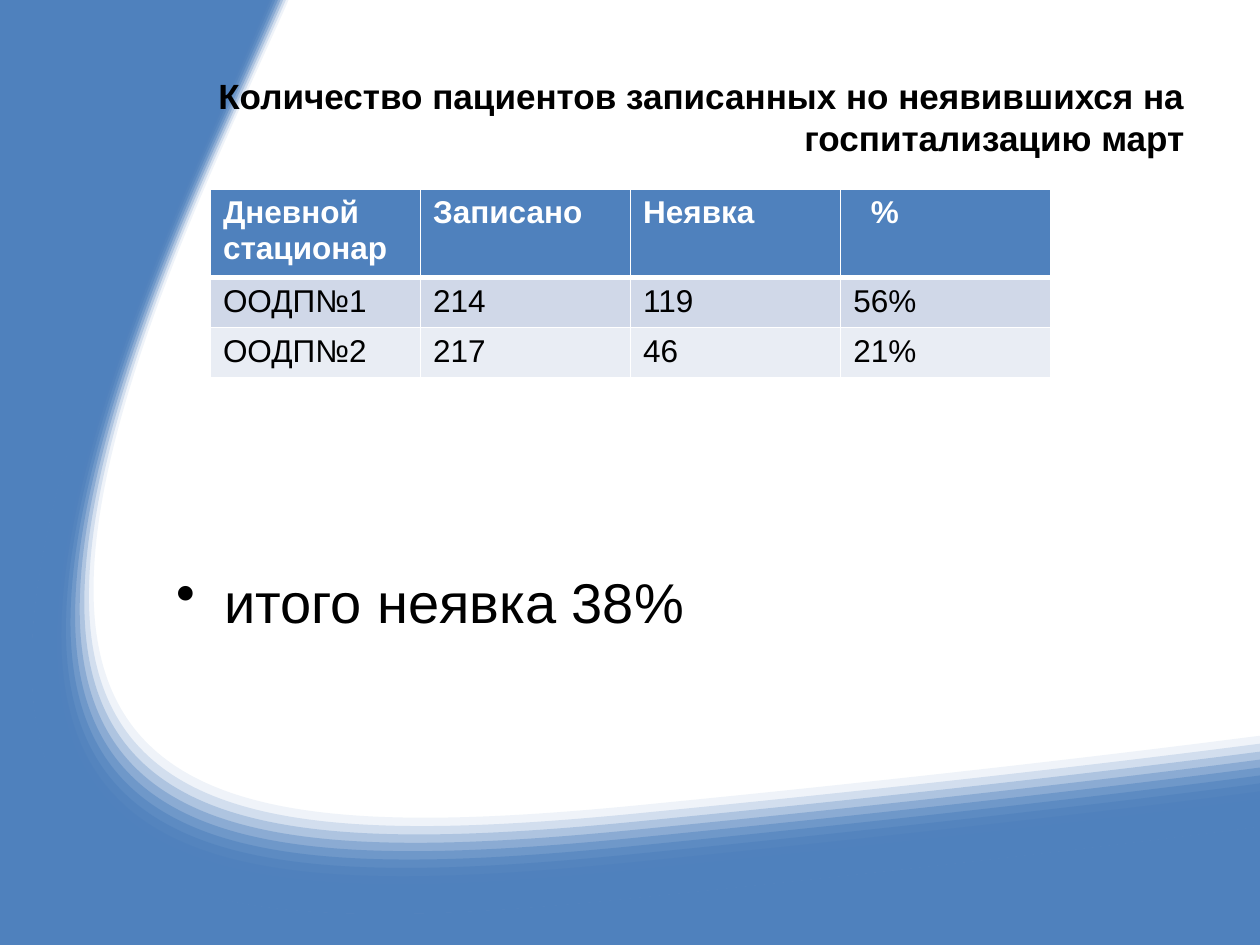
from dataclasses import dataclass

from lxml.etree import SubElement
from pptx import Presentation
from pptx.dml.color import RGBColor
from pptx.enum.text import MSO_ANCHOR, PP_ALIGN
from pptx.oxml.ns import qn
from pptx.util import Inches, Pt

COLORS = {
    "blue": "4F81BD",
    "white": "FFFFFF",
    "black": "000000",
    "odd_row": "D0D8E8",
    "even_row": "E9EDF4",
}
FONT = "Arial"
BAND_COUNT = 11

Point = tuple[float, float]

SLIDE_CORNERS: list[Point] = [(0, 0), (10, 0), (10, 7.5), (0, 7.5)]
OUTER_EDGE: list[Point] = [
    (10, 6.56), (10, 6.56), (8.06, 6.82), (4.91, 7.14), (0.8, 7.55),
    (-1.21, 7.12), (1.47, 1.15), (1.8, 0.41), (1.99, 0), (1.99, 0),
]
FIRST_BAND_EDGE: list[Point] = [
    (10, 5.84), (9.98, 5.84), (8.14, 6.09), (5.18, 6.38), (1.21, 6.78),
    (-0.55, 6.32), (1.8, 1.09), (2.11, 0.4), (2.29, 0.01), (2.29, 0),
]
LAST_BAND_EDGE: list[Point] = [
    (10, 6.47), (9.74, 6.51), (7.86, 6.75), (4.98, 7.04), (0.92, 7.45),
    (-1.07, 7.03), (1.58, 1.14), (1.86, 0.52), (2.03, 0.11), (2.08, 0),
]


@dataclass
class TextBlock:
    text: str
    top: float
    height: float
    size: int
    bold: bool = False
    alignment: PP_ALIGN = PP_ALIGN.LEFT
    anchor: MSO_ANCHOR = MSO_ANCHOR.TOP
    margin_top: float = 0.05
    bullet: bool = False


@dataclass
class TableRow:
    values: tuple[str, ...]
    fill: str
    height: float = 0.4
    header: bool = False


TEXT_BLOCKS = [
    TextBlock("Количество пациентов записанных но неявившихся на госпитализацию март",
              0.3, 1.25, 20, bold=True, alignment=PP_ALIGN.RIGHT, anchor=MSO_ANCHOR.MIDDLE),
    TextBlock("итого неявка 38%", 1.75, 4.95, 32, margin_top=2.75, bullet=True),
]
TABLE_ROWS = [
    TableRow(("Дневной стационар", "Записано", "Неявка", "%"), "blue", 0.65, header=True),
    TableRow(("ООДП№1", "214", "119", "56%"), "odd_row"),
    TableRow(("ООДП№2", "217", "46", "21%"), "even_row"),
]


def rgb(name: str) -> RGBColor:
    return RGBColor.from_string(COLORS[name])


def set_font(paragraph, size: int, color: str, bold: bool) -> None:
    paragraph.font.name = FONT
    paragraph.font.size = Pt(size)
    paragraph.font.bold = bold
    paragraph.font.color.rgb = rgb(color)


def blend_edges(start: list[Point], end: list[Point], share: float) -> list[Point]:
    return [(x1 + (x2 - x1) * share, y1 + (y2 - y1) * share)
            for (x1, y1), (x2, y2) in zip(start, end)]


def add_path_command(outline, command: str, points: list[Point]) -> None:
    element = SubElement(outline, qn(f"a:{command}"))
    for x, y in points:
        SubElement(element, qn("a:pt"), x=str(Inches(x)), y=str(Inches(y)))


def add_curve(outline, edge: list[Point]) -> None:
    for first in range(1, len(edge), 3):
        add_path_command(outline, "cubicBezTo", edge[first:first + 3])


def draw_area(slide, edge: list[Point], closing: list[Point],
              closing_curved: bool, opacity: float = 1) -> None:
    corners = [(Inches(x), Inches(y)) for x, y in SLIDE_CORNERS]
    builder = slide.shapes.build_freeform(*corners[0])
    builder.add_line_segments(corners[1:], close=True)
    shape = builder.convert_to_shape()
    outline = next(shape._element.iter(qn("a:path")))
    for child in list(outline):
        outline.remove(child)
    add_path_command(outline, "moveTo", edge[:1])
    add_curve(outline, edge)
    if closing_curved:
        add_path_command(outline, "lnTo", closing[:1])
        add_curve(outline, closing)
    else:
        for point in closing:
            add_path_command(outline, "lnTo", [point])
    SubElement(outline, qn("a:close"))
    shape.shadow.inherit = False
    shape.line.fill.background()
    shape.fill.solid()
    shape.fill.fore_color.rgb = rgb("blue")
    if opacity < 1:
        color = next(shape._element.spPr.iter(qn("a:srgbClr")))
        SubElement(color, qn("a:alpha"), val=str(round(opacity * 100) * 1000))


def draw_background(slide) -> None:
    draw_area(slide, OUTER_EDGE, [(0, 0), (0, 7.5), (10, 7.5)], closing_curved=False)
    for band in range(BAND_COUNT):
        edge = blend_edges(FIRST_BAND_EDGE, LAST_BAND_EDGE, band / (BAND_COUNT - 1))
        draw_area(slide, edge, OUTER_EDGE[::-1], True, (band + 1) / BAND_COUNT)


def draw_text(slide, block: TextBlock) -> None:
    box = slide.shapes.add_textbox(Inches(1.3), Inches(block.top), Inches(8.2), Inches(block.height))
    frame = box.text_frame
    frame.word_wrap = True
    frame.vertical_anchor = block.anchor
    frame.margin_top = Inches(block.margin_top)
    paragraph = frame.paragraphs[0]
    paragraph.text = block.text
    paragraph.alignment = block.alignment
    set_font(paragraph, block.size, "black", block.bold)
    if block.bullet:
        properties = paragraph._p.get_or_add_pPr()
        properties.set("marL", str(Inches(0.38)))
        properties.set("indent", str(Inches(-0.38)))
        bullet = properties.makeelement(qn("a:buChar"), {"char": "•"})
        properties.insert_element_before(bullet, "a:tabLst", "a:defRPr", "a:extLst")


def set_borders(cell, widths: dict[str, int]) -> None:
    properties = cell._tc.get_or_add_tcPr()
    for position, (side, width) in enumerate(widths.items()):
        line = properties.makeelement(qn(f"a:{side}"), {"w": str(Pt(width))})
        fill = SubElement(line, qn("a:solidFill"))
        SubElement(fill, qn("a:srgbClr"), val=COLORS["white"])
        properties.insert(position, line)


def draw_table(slide, rows: list[TableRow]) -> None:
    column_count = len(rows[0].values)
    table = slide.shapes.add_table(
        len(rows), column_count, Inches(1.67), Inches(1.5),
        Inches(6.67), Inches(sum(row.height for row in rows))).table
    for row_index, row in enumerate(rows):
        table.rows[row_index].height = Inches(row.height)
        for column_index, value in enumerate(row.values):
            cell = table.cell(row_index, column_index)
            cell.text = value
            cell.fill.solid()
            cell.fill.fore_color.rgb = rgb(row.fill)
            set_font(cell.text_frame.paragraphs[0], 18,
                     "white" if row.header else "black", row.header)
            set_borders(cell, {"lnL": 1, "lnR": 1, "lnT": 3 if row_index == 1 else 1,
                               "lnB": 3 if row.header else 1})
    table.cell(0, column_count - 1).margin_left = Inches(0.24)


def main() -> None:
    presentation = Presentation()
    presentation.slide_width = Inches(10)
    presentation.slide_height = Inches(7.5)
    slide = presentation.slides.add_slide(presentation.slide_layouts[6])
    slide.background.fill.solid()
    slide.background.fill.fore_color.rgb = rgb("white")
    draw_background(slide)
    for block in TEXT_BLOCKS:
        draw_text(slide, block)
    draw_table(slide, TABLE_ROWS)
    presentation.save("out.pptx")


if __name__ == "__main__":
    main()
